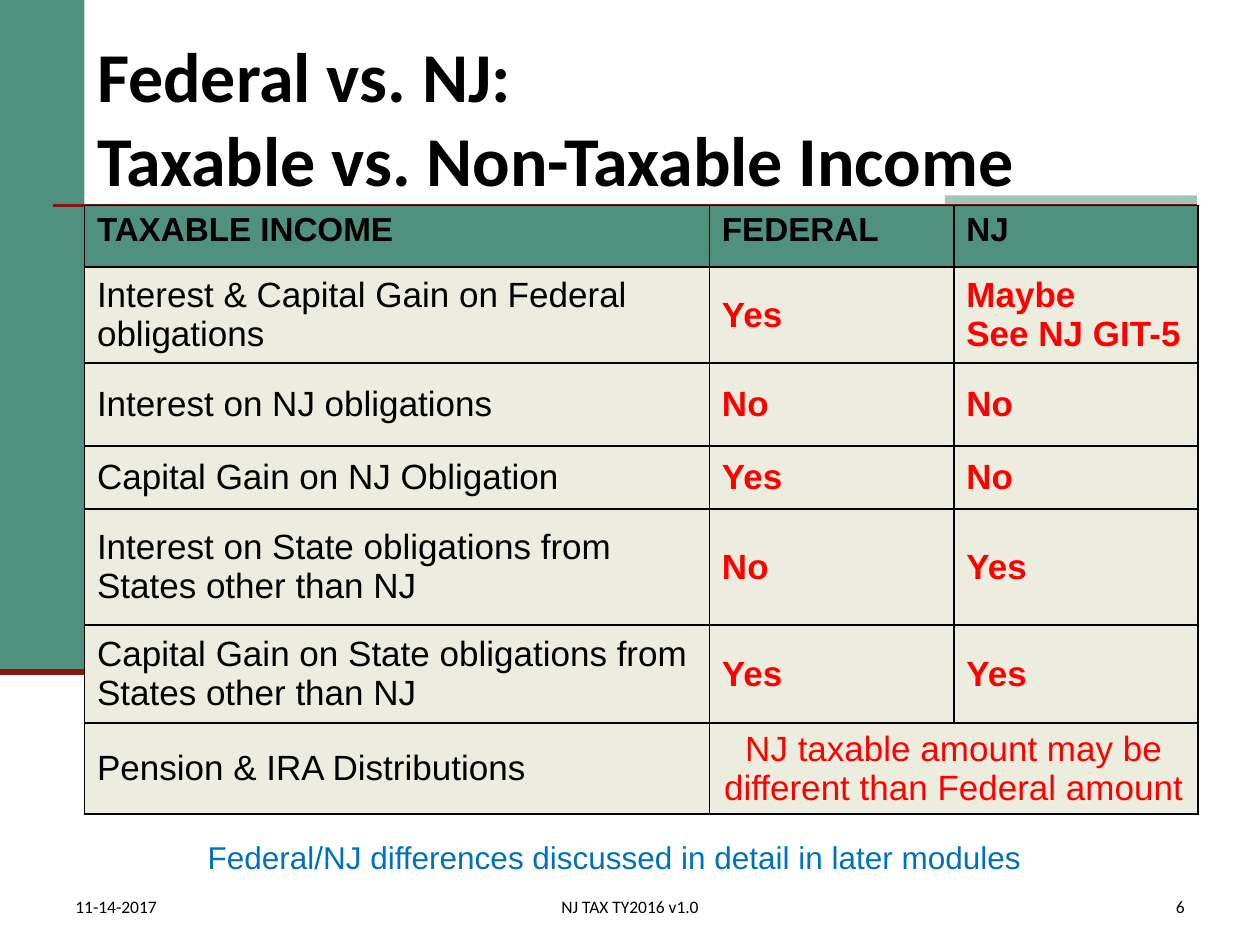
import dataclasses

import pptx
import pptx.dml.color
import pptx.enum.shapes
import pptx.enum.text
import pptx.oxml.ns
import pptx.util
from lxml import etree

Inches = pptx.util.Inches
Align = pptx.enum.text.PP_ALIGN
Anchor = pptx.enum.text.MSO_ANCHOR


@dataclasses.dataclass(frozen=True)
class Theme:
    green: str = "4F917E"
    light_green: str = "A0C6BA"
    dark_red: str = "891411"
    cream: str = "EDEDDF"
    black: str = "000000"
    red: str = "FF0000"
    blue: str = "0070C0"
    heading_font: str = "Calibri"
    body_font: str = "Arial"
    title_size: int = 40
    header_size: int = 19
    cell_size: int = 20
    note_size: int = 18
    footer_size: int = 10


THEME = Theme()
COLUMN_WIDTHS = [4.96, 1.94, 1.94]
ROW_HEIGHTS = [0.49, 0.76, 0.66, 0.5, 0.92, 0.78, 0.72]
ROWS = [
    ("TAXABLE INCOME", "FEDERAL", "NJ"),
    ("Interest & Capital Gain on Federal obligations", "Yes", "Maybe\vSee NJ GIT-5"),
    ("Interest on NJ obligations", "No", "No"),
    ("Capital Gain on NJ Obligation", "Yes", "No"),
    ("Interest on State obligations from States other than NJ", "No", "Yes"),
    ("Capital Gain on State obligations from States other than NJ", "Yes", "Yes"),
    ("Pension & IRA Distributions", "NJ taxable amount may be different than Federal amount"),
]


def rgb(color):
    return pptx.dml.color.RGBColor.from_string(color)


def set_text(text_frame, text, font, size, color, bold=False, align=Align.LEFT):
    text_frame.text = text
    for paragraph in text_frame.paragraphs:
        paragraph.alignment = align
        for run in paragraph.runs:
            run.font.name = font
            run.font.size = pptx.util.Pt(size)
            run.font.bold = bold
            run.font.color.rgb = rgb(color)


def add_block(slide, left, top, width, height, color):
    shape = slide.shapes.add_shape(
        pptx.enum.shapes.MSO_SHAPE.RECTANGLE,
        Inches(left), Inches(top), Inches(width), Inches(height))
    shape.shadow.inherit = False
    shape.fill.solid()
    shape.fill.fore_color.rgb = rgb(color)
    shape.line.fill.background()


def add_rule(slide, left, right, top, weight):
    connector = slide.shapes.add_connector(
        pptx.enum.shapes.MSO_CONNECTOR.STRAIGHT,
        Inches(left), Inches(top), Inches(right), Inches(top))
    connector.line.color.rgb = rgb(THEME.dark_red)
    connector.line.width = pptx.util.Pt(weight)
    etree.SubElement(connector._element.spPr, pptx.oxml.ns.qn("a:effectLst"))


def add_title(slide, text):
    title = slide.shapes.title
    title.left, title.top = Inches(0.67), Inches(0.3)
    title.width, title.height = Inches(8.83), Inches(1.25)
    title.text_frame.auto_size = pptx.enum.text.MSO_AUTO_SIZE.NONE
    title.text_frame.vertical_anchor = Anchor.MIDDLE
    set_text(title.text_frame, text, THEME.heading_font, THEME.title_size,
             THEME.black, bold=True)


def add_label(slide, text, left, top, width, height, font, size, color,
              align=Align.LEFT, anchor=Anchor.BOTTOM):
    box = slide.shapes.add_textbox(Inches(left), Inches(top), Inches(width), Inches(height))
    box.text_frame.word_wrap = True
    box.text_frame.vertical_anchor = anchor
    set_text(box.text_frame, text, font, size, color, align=align)


def set_borders(cell):
    properties = cell._tc.get_or_add_tcPr()
    for index, side in enumerate(("lnL", "lnR", "lnT", "lnB")):
        line = etree.Element(pptx.oxml.ns.qn(f"a:{side}"), w=str(pptx.util.Pt(1)))
        fill = etree.SubElement(line, pptx.oxml.ns.qn("a:solidFill"))
        etree.SubElement(fill, pptx.oxml.ns.qn("a:srgbClr"), val=THEME.black)
        properties.insert(index, line)


def format_cell(cell, text, is_header, is_answer, is_merged):
    cell.fill.solid()
    cell.fill.fore_color.rgb = rgb(THEME.green if is_header else THEME.cream)
    cell.vertical_anchor = Anchor.TOP if is_header else Anchor.MIDDLE
    set_text(cell.text_frame, text, THEME.body_font,
             THEME.header_size if is_header else THEME.cell_size,
             THEME.red if is_answer else THEME.black,
             bold=is_header or (is_answer and not is_merged),
             align=Align.CENTER if is_merged else Align.LEFT)


def add_income_table(slide):
    table = slide.shapes.add_table(
        len(ROWS), len(COLUMN_WIDTHS), Inches(0.67), Inches(1.63),
        Inches(sum(COLUMN_WIDTHS)), Inches(sum(ROW_HEIGHTS))).table
    for column, width in zip(table.columns, COLUMN_WIDTHS):
        column.width = Inches(width)
    for row, height in zip(table.rows, ROW_HEIGHTS):
        row.height = Inches(height)
    last_row = len(ROWS) - 1
    table.cell(last_row, 1).merge(table.cell(last_row, 2))
    for row_index, texts in enumerate(ROWS):
        for column_index, text in enumerate(texts):
            cell = table.cell(row_index, column_index)
            is_header = row_index == 0
            format_cell(cell, text, is_header,
                        is_answer=column_index > 0 and not is_header,
                        is_merged=cell.is_merge_origin)
    for cell in table.iter_cells():
        set_borders(cell)


def add_footer(slide):
    for text, left, width, align in (
            ("11-14-2017", 0.5, 2.17, Align.LEFT),
            ("NJ TAX TY2016 v1.0", 3.31, 3.38, Align.CENTER),
            ("6", 7.42, 2.08, Align.RIGHT)):
        add_label(slide, text, left, 7, width, 0.33, THEME.heading_font,
                  THEME.footer_size, THEME.black, align)


def main():
    presentation = pptx.Presentation()
    presentation.slide_width, presentation.slide_height = Inches(10), Inches(7.5)
    slide = presentation.slides.add_slide(presentation.slide_layouts[5])
    add_block(slide, 0, 0, 0.67, 5.33, THEME.green)
    add_block(slide, 7.5, 1.55, 2, 0.2, THEME.light_green)
    add_rule(slide, 0.42, 9.5, 1.63, 1.5)
    add_rule(slide, 0, 0.67, 5.33, 3.5)
    add_title(slide, "Federal vs. NJ:\vTaxable vs. Non-Taxable Income")
    add_income_table(slide)
    add_footer(slide)
    add_label(slide, "Federal/NJ differences discussed in detail in later modules",
              1.55, 6.6, 6.9, 0.4, THEME.body_font, THEME.note_size, THEME.blue,
              anchor=Anchor.TOP)
    presentation.save("out.pptx")


if __name__ == "__main__":
    main()
